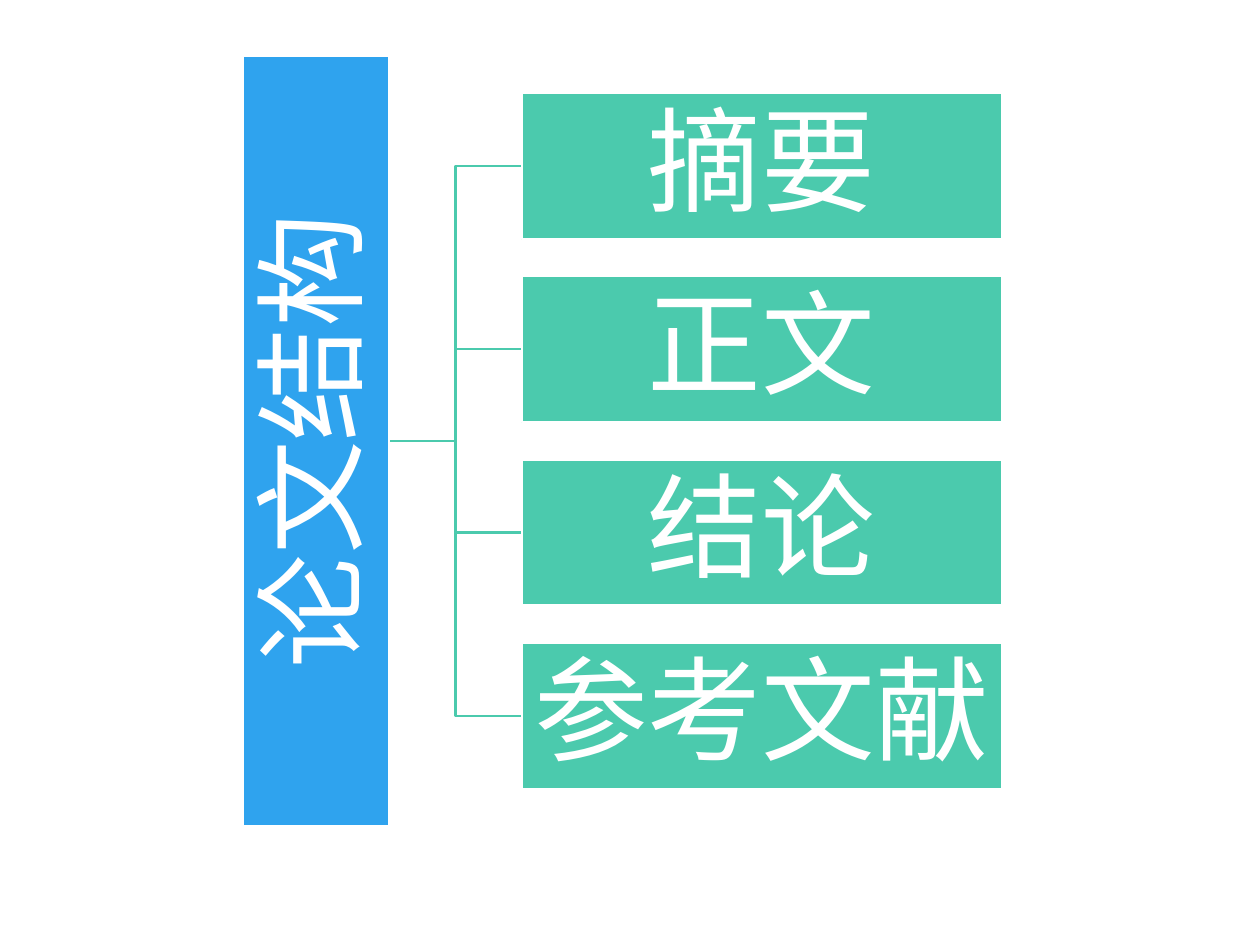
from pptx import Presentation
from pptx.dml.color import RGBColor
from pptx.enum.shapes import MSO_SHAPE
from pptx.enum.text import MSO_ANCHOR, PP_ALIGN
from pptx.util import Inches, Pt

RECTANGLE = MSO_SHAPE.RECTANGLE
MIDDLE = MSO_ANCHOR.MIDDLE
CENTER = PP_ALIGN.CENTER

BLUE = RGBColor(0x2F, 0xA3, 0xEE)
GREEN = RGBColor(0x4B, 0xCA, 0xAD)
WHITE = RGBColor(0xFF, 0xFF, 0xFF)

SECTIONS = ["摘要", "正文", "结论", "参考文献"]
BOX_HEIGHT = 1.16
SECTION_LEFT, SECTION_WIDTH = 4.14, 3.81
FIRST_TOP, LAST_TOP = 0.74, 5.10
ROOT_LEFT, ROOT_TOP, ROOT_LENGTH = -0.55, 2.92, 6.12

deck = Presentation()
deck.slide_width, deck.slide_height = Inches(10), Inches(7.5)
page = deck.slides.add_slide(deck.slide_layouts[6])


def add_box(text, left, top, width, fill, rotation=0):
    box = page.shapes.add_shape(
        RECTANGLE, Inches(left), Inches(top), Inches(width), Inches(BOX_HEIGHT))
    box.rotation = rotation
    box.shadow.inherit = False
    box.fill.solid()
    box.fill.fore_color.rgb = fill
    box.line.color.rgb = WHITE
    box.line.width = Pt(1.25)
    frame = box.text_frame
    frame.word_wrap = True
    frame.vertical_anchor = MIDDLE
    frame.margin_left = frame.margin_right = Inches(0.05)
    frame.margin_top = frame.margin_bottom = Inches(0.05)
    para = frame.paragraphs[0]
    para.alignment = CENTER
    para.line_spacing = 0.9
    para.space_after = Pt(6)
    span = para.add_run()
    span.text = text
    span.font.name = "Cabin"
    span.font.size = Pt(65)
    span.font.color.rgb = WHITE


# Branches run from the root's right edge through a shared trunk to each section
root_middle = ROOT_TOP + BOX_HEIGHT / 2
root_right = ROOT_LEFT + (ROOT_LENGTH + BOX_HEIGHT) / 2
trunk = (root_right + SECTION_LEFT) / 2
step = (LAST_TOP - FIRST_TOP) / (len(SECTIONS) - 1)
tops = [FIRST_TOP + index * step for index in range(len(SECTIONS))]

for top in tops:
    middle = top + BOX_HEIGHT / 2
    builder = page.shapes.build_freeform(Inches(root_right), Inches(root_middle))
    corners = [(trunk, root_middle), (trunk, middle), (SECTION_LEFT, middle)]
    builder.add_line_segments([(Inches(x), Inches(y)) for x, y in corners], close=False)
    branch = builder.convert_to_shape()
    branch.shadow.inherit = False
    branch.fill.background()
    branch.line.color.rgb = GREEN
    branch.line.width = Pt(1.25)

add_box("论文结构", ROOT_LEFT, ROOT_TOP, ROOT_LENGTH, BLUE, rotation=270)
for section, top in zip(SECTIONS, tops):
    add_box(section, SECTION_LEFT, top, SECTION_WIDTH, GREEN)

deck.save("out.pptx")
